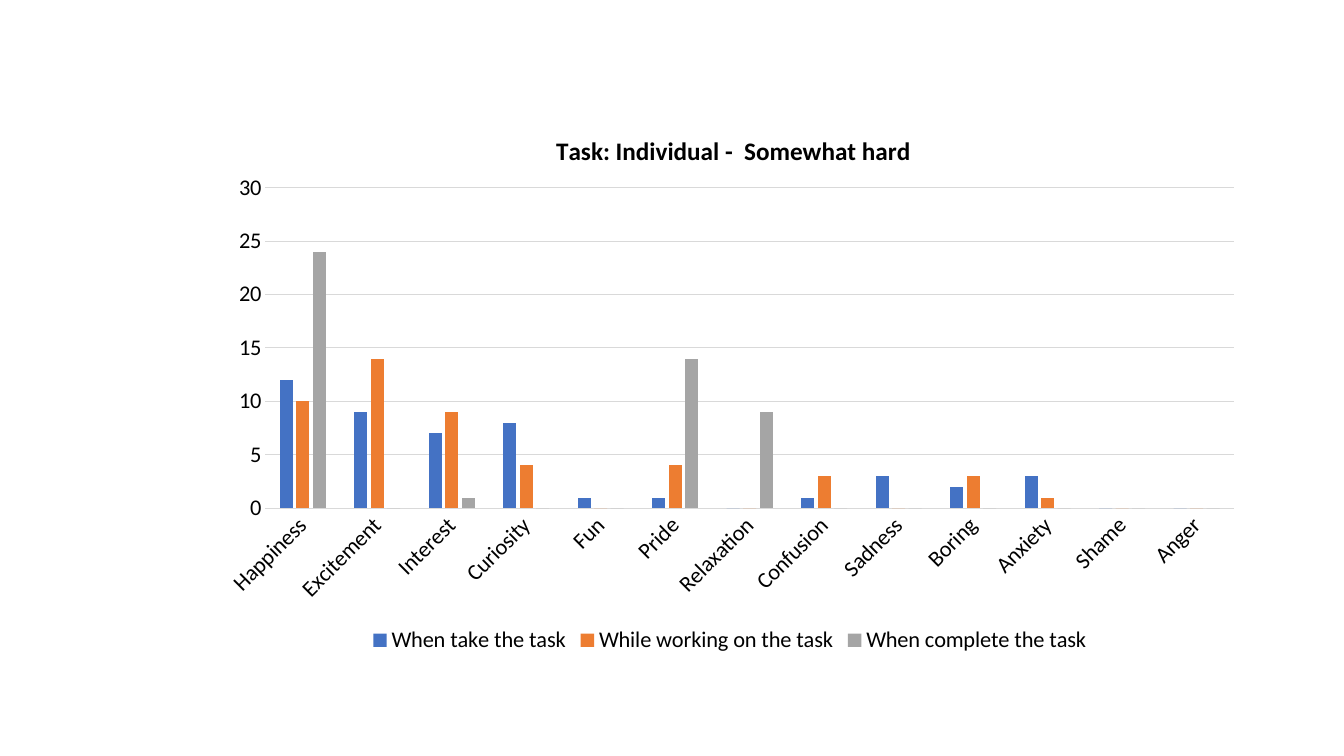
from dataclasses import dataclass

from lxml import etree
from pptx import Presentation
from pptx import util as u
from pptx.chart.data import CategoryChartData
from pptx.dml.color import RGBColor
from pptx.enum import chart as ch
from pptx.oxml.ns import qn

COLORS = {
    "text": "000000",
    "grid": "D9D9D9",
    "blue": "4472C4",
    "orange": "ED7D31",
    "gray": "A5A5A5",
}
FONT = "Calibri"
WIDTH, HEIGHT = u.Inches(13.33), u.Inches(7.5)


@dataclass(frozen=True)
class Stage:
    name: str
    color: str
    counts: tuple[int, ...]


EMOTIONS = (
    "Happiness", "Excitement", "Interest", "Curiosity", "Fun", "Pride", "Relaxation",
    "Confusion", "Sadness", "Boring", "Anxiety", "Shame", "Anger",
)
STAGES = (
    Stage("When take the task", "blue", (12, 9, 7, 8, 1, 1, 0, 1, 3, 2, 3, 0, 0)),
    Stage("While working on the task", "orange", (10, 14, 9, 4, 0, 4, 0, 3, 0, 3, 1, 0, 0)),
    Stage("When complete the task", "gray", (24, 0, 1, 0, 0, 14, 9, 0, 0, 0, 0, 0, 0)),
)


def rgb(name: str) -> RGBColor:
    return RGBColor.from_string(COLORS[name])


def style_font(font, size: int, bold: bool = False) -> None:
    font.name, font.size, font.bold = FONT, u.Pt(size), bold
    font.color.rgb = rgb("text")


def style_line(line) -> None:
    line.color.rgb = rgb("grid")
    line.width = u.Pt(0.75)


def place(element, index: int, **shares: float) -> None:
    """Lay out a chart part by shares of the chart's size."""
    for old in element.findall(qn("c:layout")):
        element.remove(old)
    layout = etree.Element(qn("c:layout"))
    manual = etree.SubElement(layout, qn("c:manualLayout"))
    if "w" in shares:
        etree.SubElement(manual, qn("c:layoutTarget"), val="inner")
    for key in ("x", "y"):
        etree.SubElement(manual, qn(f"c:{key}Mode"), val="edge")
    for key, share in shares.items():
        etree.SubElement(manual, qn(f"c:{key}"), val=str(share))
    element.insert(index, layout)


def add_emotion_chart(s):
    data = CategoryChartData(number_format="General")
    data.categories = EMOTIONS
    for stage in STAGES:
        data.add_series(stage.name, stage.counts)
    frame = s.shapes.add_chart(
        ch.XL_CHART_TYPE.COLUMN_CLUSTERED,
        int(WIDTH * 0.153), int(HEIGHT * 0.141), int(WIDTH * 0.78), int(HEIGHT * 0.73), data,
    )
    chart = frame.chart
    style_font(chart.font, 16)
    return chart


def style_columns(chart) -> None:
    plot = chart.plots[0]
    plot.gap_width, plot.overlap, plot.vary_by_categories = 219, -27, False
    for series, stage in zip(plot.series, STAGES):
        series.format.fill.solid()
        series.format.fill.fore_color.rgb = rgb(stage.color)
        series.invert_if_negative = False
    place(chart.element.find(".//" + qn("c:plotArea")), 0, x=0.057, y=0.147, w=0.924, h=0.581)


def style_axes(chart) -> None:
    for axis in (chart.category_axis, chart.value_axis):
        axis.major_tick_mark = axis.minor_tick_mark = ch.XL_TICK_MARK.NONE
        style_font(axis.tick_labels.font, 16)
    emotions, counts = chart.category_axis, chart.value_axis
    style_line(emotions.format.line)
    # Slant the emotion names by 45 degrees
    labels = chart.element.find(".//" + qn("c:catAx")).find(qn("c:txPr"))
    labels.find(qn("a:bodyPr")).set("rot", "-2700000")
    counts.minimum_scale, counts.maximum_scale, counts.major_unit = 0, 30, 5
    counts.format.line.fill.background()
    style_line(counts.major_gridlines.format.line)


def add_title_and_legend(chart) -> None:
    chart.has_title = True
    p = chart.chart_title.text_frame.paragraphs[0]
    p.text = "Task: Individual -  Somewhat hard"
    style_font(p.font, 18, bold=True)
    place(chart.element.find(".//" + qn("c:title")), 1, x=0.33, y=0.04)

    chart.has_legend = True
    chart.legend.position = ch.XL_LEGEND_POSITION.BOTTOM
    chart.legend.include_in_layout = False
    style_font(chart.legend.font, 16)


def main() -> None:
    prs = Presentation()
    prs.slide_width, prs.slide_height = WIDTH, HEIGHT
    s = prs.slides.add_slide(prs.slide_layouts[6])
    chart = add_emotion_chart(s)
    style_columns(chart)
    style_axes(chart)
    add_title_and_legend(chart)
    prs.save("out.pptx")


if __name__ == "__main__":
    main()
